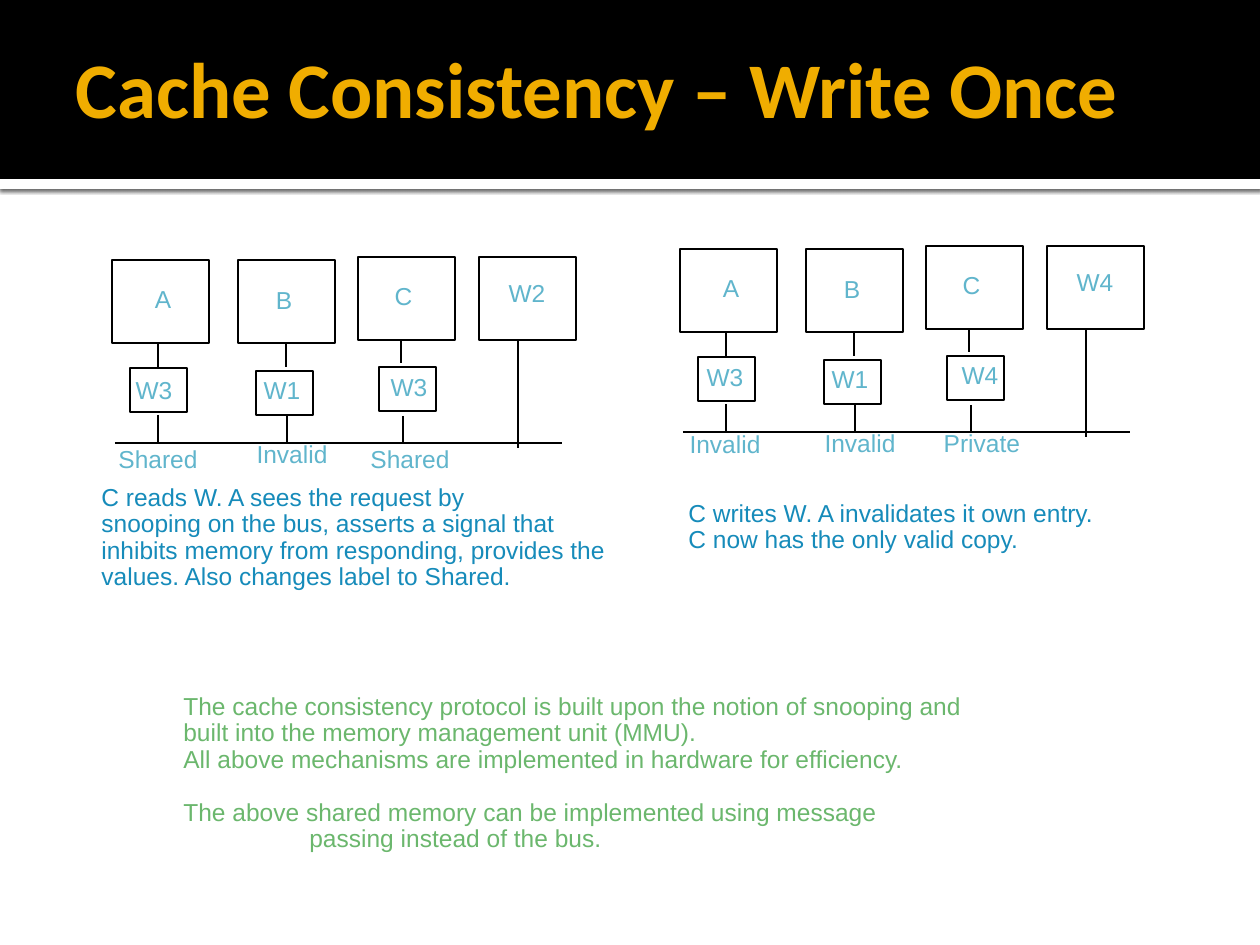
from dataclasses import dataclass
from typing import Optional

from lxml.etree import SubElement
from pptx import Presentation
from pptx.dml.color import RGBColor
from pptx.enum.shapes import MSO_CONNECTOR, MSO_SHAPE
from pptx.enum.text import MSO_ANCHOR, MSO_AUTO_SIZE, PP_ALIGN
from pptx.oxml.ns import qn
from pptx.util import Emu, Pt

PX_PER_INCH = 126
BLACK, WHITE, GOLD = "000000", "FFFFFF", "F0AD00"
AQUA, BLUE, GREEN = "60B5CC", "168BBA", "6BB76D"


@dataclass
class Label:
    text: str
    centre: int
    top: int
    width: int = 66


@dataclass
class Processor:
    box: tuple[int, int]
    cache: tuple[int, int]
    upper_link: tuple[int, int]
    lower_link: tuple[int, int]


@dataclass
class Diagram:
    offset: tuple[int, int]
    labels: list[Label]


@dataclass
class Note:
    bounds: tuple[int, int, int, int]
    color: str
    lines: list[str]


# Shared geometry of the two diagrams
BOX_SIZE, CACHE_SIZE = (97, 83), (57, 44)
LINK_HEIGHT, LOWER_LINK_HEIGHT = 23, 27
MEMORY_BOX = (479, 257)
BUS = (115, 443, 562, 443)
MEMORY_LINK = (518, 340, 518, 448)
PROCESSORS = [
    Processor((112, 260), (130, 368), (158, 344), (158, 415)),
    Processor((238, 260), (256, 371), (286, 344), (287, 416)),
    Processor((358, 257), (379, 367), (401, 340), (403, 416)),
]
COMMON_LABELS = [
    Label("A", 163, 281, 44),
    Label("B", 284, 282, 44),
    Label("C", 403, 278, 45),
    Label("W1", 282, 372),
    Label("Invalid", 292, 436, 106),
]
DIAGRAMS = [
    Diagram((0, 0), [
        Label("W2", 527, 275), Label("W3", 154, 372), Label("W3", 409, 369),
        Label("Shared", 158, 441, 106), Label("Shared", 410, 441, 106),
    ]),
    Diagram((568, -11), [
        Label("W4", 527, 275), Label("W3", 157, 370), Label("W4", 412, 368),
        Label("Invalid", 157, 437, 106), Label("Private", 414, 436, 102),
    ]),
]
NOTES = [
    Note((89, 479, 533, 120), BLUE, [
        "C reads W. A sees the request by",
        "snooping on the bus, asserts a signal that",
        "inhibits memory from responding, provides the",
        "values. Also changes label to Shared.",
    ]),
    Note((676, 495, 433, 67), BLUE, [
        "C writes W. A invalidates it own entry.",
        "C now has the only valid copy.",
    ]),
]
SUMMARY = Note((171, 688, 809, 174), GREEN, [
    "The cache consistency protocol is built upon the notion of snooping and",
    "built into the memory management unit (MMU).",
    "All above mechanisms are implemented in hardware for efficiency.",
    "The above shared memory can be implemented using message",
    "passing instead of the bus.",
])


def px(value: int) -> Emu:
    return Emu(round(value * 914400 / PX_PER_INCH))


def rgb(color: str) -> RGBColor:
    return RGBColor.from_string(color)


def add_rectangle(slide, left: int, top: int, width: int, height: int,
                  fill: Optional[str] = None):
    """Draw a plain filled band, or a black outline when no fill is given."""
    shape = slide.shapes.add_shape(
        MSO_SHAPE.RECTANGLE, px(left), px(top), px(width), px(height))
    shape.shadow.inherit = False
    if fill:
        shape.fill.solid()
        shape.fill.fore_color.rgb = rgb(fill)
        shape.line.fill.background()
    else:
        shape.fill.background()
        shape.line.color.rgb = rgb(BLACK)
        shape.line.width = Pt(1)
    return shape


def add_line(slide, x1: int, y1: int, x2: int, y2: int) -> None:
    line = slide.shapes.add_connector(
        MSO_CONNECTOR.STRAIGHT, px(x1), px(y1), px(x2), px(y2))
    line.line.color.rgb = rgb(BLACK)
    line.line.width = Pt(1)
    SubElement(line._element.spPr, qn("a:effectLst"))


def add_text(slide, bounds: tuple[int, int, int, int], lines: list[str],
             color: str, alignment=PP_ALIGN.LEFT):
    box = slide.shapes.add_textbox(*(px(value) for value in bounds))
    frame = box.text_frame
    frame.word_wrap = False
    frame.text = "\n".join(lines)
    for paragraph in frame.paragraphs:
        paragraph.alignment = alignment
        paragraph.line_spacing = 0.9
        paragraph.font.name = "Arial"
        paragraph.font.size = Pt(14)
        paragraph.font.color.rgb = rgb(color)
    return frame


def add_header(slide) -> None:
    # White band with a soft shadow under the black one
    band = add_rectangle(slide, 0, 168, 1260, 21, WHITE)
    effects = band._element.spPr.find(qn("a:effectLst"))
    shadow = SubElement(effects, qn("a:outerShdw"), blurRad=str(Pt(2.5)),
                        dist=str(Pt(0.8)), dir="5400000", rotWithShape="0")
    shadow_color = SubElement(shadow, qn("a:srgbClr"), val=BLACK)
    SubElement(shadow_color, qn("a:alpha"), val="60000")
    add_rectangle(slide, 0, 0, 1260, 179, BLACK)

    # Title, brought in front of the bands
    title = slide.shapes.title
    slide.shapes._spTree.append(title._element)
    title.left, title.top, title.width, title.height = (
        px(value) for value in (63, 6, 1134, 161))
    frame = title.text_frame
    frame.text = "Cache Consistency – Write Once"
    frame.auto_size = MSO_AUTO_SIZE.NONE
    frame.vertical_anchor = MSO_ANCHOR.MIDDLE
    frame.margin_right = Pt(3.6)
    paragraph = frame.paragraphs[0]
    paragraph.alignment = PP_ALIGN.LEFT
    paragraph.font.name = "Calibri"
    paragraph.font.size = Pt(45)
    paragraph.font.bold = True
    paragraph.font.color.rgb = rgb(GOLD)


def add_diagram(slide, diagram: Diagram) -> None:
    dx, dy = diagram.offset

    def place_box(corner: tuple[int, int], size: tuple[int, int]) -> None:
        add_rectangle(slide, corner[0] + dx, corner[1] + dy, *size)

    def place_line(x1: int, y1: int, x2: int, y2: int) -> None:
        add_line(slide, x1 + dx, y1 + dy, x2 + dx, y2 + dy)

    for processor in PROCESSORS:
        place_box(processor.box, BOX_SIZE)
        place_box(processor.cache, CACHE_SIZE)
        for (x, y), height in ((processor.upper_link, LINK_HEIGHT),
                               (processor.lower_link, LOWER_LINK_HEIGHT)):
            place_line(x, y, x, y + height)
    place_box(MEMORY_BOX, BOX_SIZE)
    place_line(*BUS)
    place_line(*MEMORY_LINK)
    for label in COMMON_LABELS + diagram.labels:
        left = label.centre - label.width // 2
        add_text(slide, (left + dx, label.top + dy, label.width, 42),
                 [label.text], AQUA, PP_ALIGN.CENTER)


def main() -> None:
    presentation = Presentation()
    presentation.slide_width, presentation.slide_height = px(1260), px(945)
    slide = presentation.slides.add_slide(presentation.slide_layouts[5])
    add_header(slide)
    for diagram in DIAGRAMS:
        add_diagram(slide, diagram)
    for note in NOTES:
        add_text(slide, note.bounds, note.lines, note.color)

    # Summary: a gap before the last sentence, whose second line is indented
    summary = add_text(slide, SUMMARY.bounds, SUMMARY.lines, SUMMARY.color)
    summary.paragraphs[3].space_before = Pt(15)
    summary.paragraphs[4]._p.get_or_add_pPr().set("marL", str(px(126)))
    presentation.save("out.pptx")


if __name__ == "__main__":
    main()
